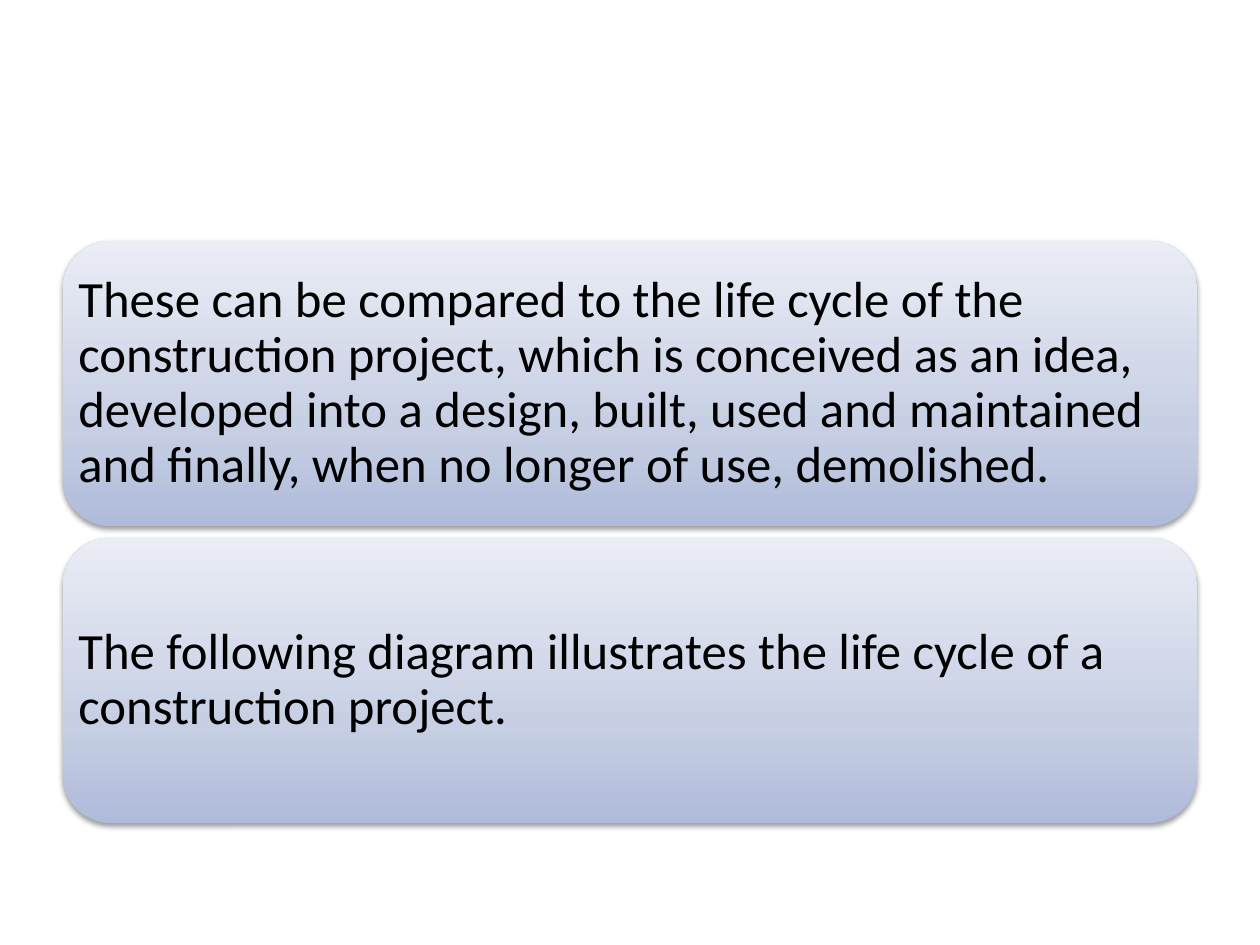
"""Build a slide with two stacked gradient panels about the construction life cycle."""
from dataclasses import dataclass

from pptx import Presentation
from pptx.dml.color import RGBColor
from pptx.enum.shapes import MSO_SHAPE
from pptx.enum.text import MSO_ANCHOR, PP_ALIGN
from pptx.oxml import parse_xml
from pptx.oxml.ns import nsdecls, qn
from pptx.util import Cm, Pt

BLACK = RGBColor(0x00, 0x00, 0x00)
GRADIENT = (
    (0, RGBColor(0xAF, 0xBB, 0xDA)),
    (35, RGBColor(0xC7, 0xCF, 0xE4)),
    (100, RGBColor(0xEA, 0xED, 0xF5)),
)
LEFT, TOP, WIDTH, HEIGHT, GAP = 1.27, 4.86, 22.86, 5.75, 0.23
INSET = Cm(0.03)


@dataclass
class Panel:
    """A rounded panel and the text it holds."""

    row: int
    text: str


PANELS = (
    Panel(0, "These can be compared to the life cycle of the construction project, "
             "which is conceived as an idea, developed into a design, built, used and "
             "maintained and finally, when no longer of use, demolished."),
    Panel(1, "The following diagram illustrates the life cycle of a construction project."),
)


def style_panel(sp) -> None:
    """Give a shape the upward gradient and the soft shadow below it."""
    stops = "".join(
        f'<a:gs pos="{pos * 1000}"><a:srgbClr val="{color}"/></a:gs>'
        for pos, color in GRADIENT
    )
    gradient = parse_xml(
        f'<a:gradFill {nsdecls("a")} rotWithShape="1"><a:gsLst>{stops}</a:gsLst>'
        '<a:lin ang="16200000" scaled="0"/></a:gradFill>'
    )
    shadow = parse_xml(
        f'<a:outerShdw {nsdecls("a")} blurRad="{Pt(3.1)}" dist="{Pt(1.6)}" '
        'dir="5400000" rotWithShape="0"><a:srgbClr val="000000">'
        '<a:alpha val="38000"/></a:srgbClr></a:outerShdw>'
    )
    sp.line.fill.background()
    sp.shadow.inherit = False
    props = sp._element.spPr
    props.find(qn("a:prstGeom")).addnext(gradient)
    props.find(qn("a:effectLst")).append(shadow)


def add_panel(s, panel: Panel) -> None:
    """Draw one panel in its row."""
    top = TOP + panel.row * (HEIGHT + GAP)
    sp = s.shapes.add_shape(
        MSO_SHAPE.ROUNDED_RECTANGLE, Cm(LEFT), Cm(top), Cm(WIDTH), Cm(HEIGHT)
    )
    style_panel(sp)
    tf = sp.text_frame
    tf.word_wrap = True
    tf.vertical_anchor = MSO_ANCHOR.MIDDLE
    tf.margin_left = tf.margin_right = tf.margin_top = tf.margin_bottom = INSET
    p = tf.paragraphs[0]
    p.text = panel.text
    p.alignment = PP_ALIGN.LEFT
    p.line_spacing = 0.9
    p.font.name = "Calibri"
    p.font.size = Pt(29)
    p.font.color.rgb = BLACK


def main() -> None:
    """Create the presentation and save it."""
    prs = Presentation()
    prs.slide_width, prs.slide_height = Cm(25.4), Cm(19.05)
    s = prs.slides.add_slide(prs.slide_layouts[6])
    for panel in PANELS:
        add_panel(s, panel)
    prs.save("out.pptx")


if __name__ == "__main__":
    main()
